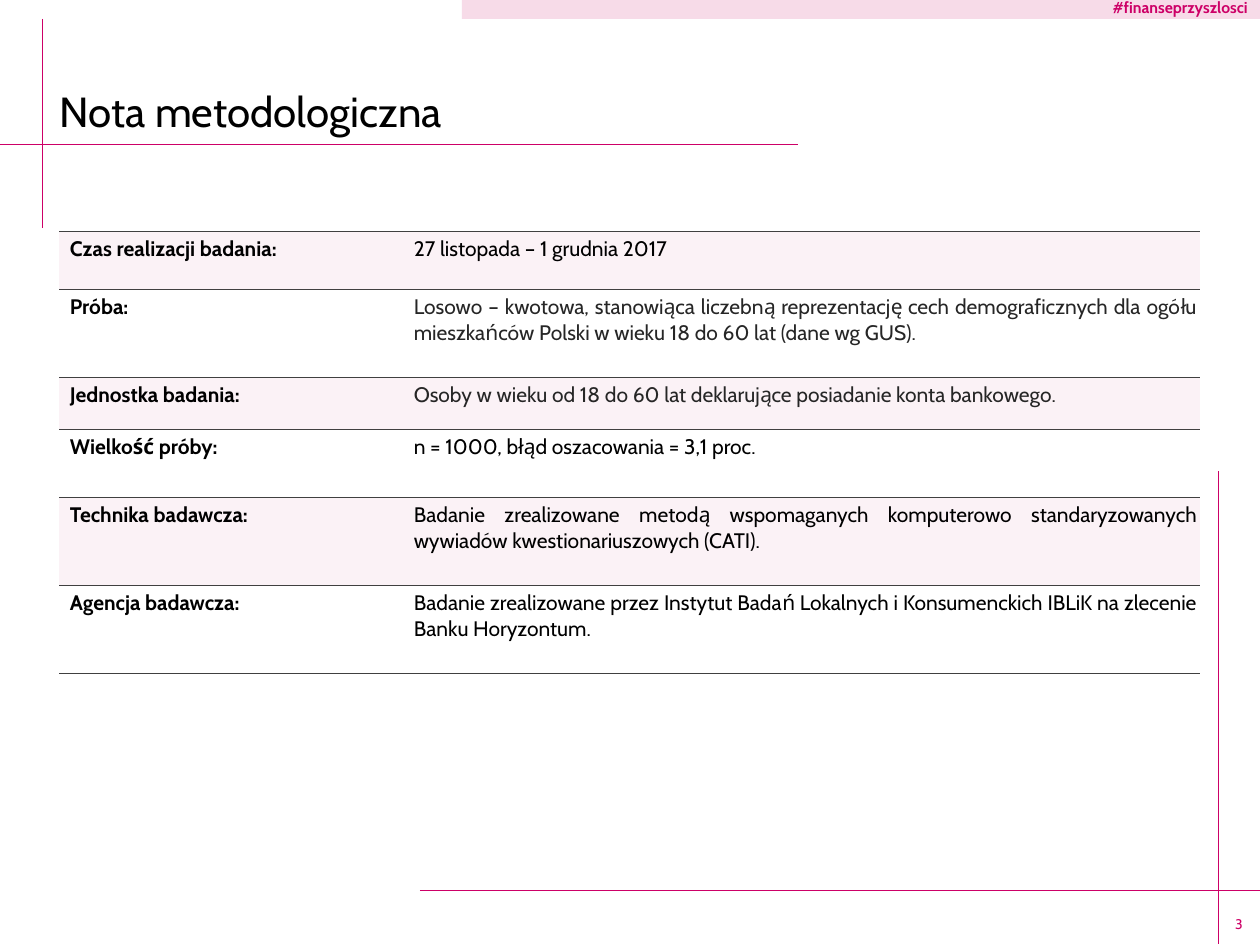
from lxml import etree
from pptx import Presentation
from pptx.dml.color import RGBColor
from pptx.enum.shapes import MSO_CONNECTOR, MSO_SHAPE
from pptx.enum.text import MSO_ANCHOR, PP_ALIGN
from pptx.oxml.ns import qn
from pptx.util import Pt

RECT, LINE = MSO_SHAPE.RECTANGLE, MSO_CONNECTOR.STRAIGHT
MIDDLE, BOTTOM, TOP = MSO_ANCHOR.MIDDLE, MSO_ANCHOR.BOTTOM, MSO_ANCHOR.TOP
LEFT, RIGHT = PP_ALIGN.LEFT, PP_ALIGN.RIGHT
CENTER, JUSTIFY = PP_ALIGN.CENTER, PP_ALIGN.JUSTIFY

COLORS = {"pink": "CD0067", "pale": "F7DBE8", "band": "FBF2F6",
          "black": "000000", "gray": "262626", "rule": "404040"}
SIDES = ("left", "top", "right", "bottom")

ROWS = [
    (33.2, "Czas realizacji badania:", "27 listopada – 1 grudnia 2017", "black"),
    (50.3, "Próba:",
     "Losowo – kwotowa, stanowiąca liczebną reprezentację cech demograficznych "
     "dla ogółu mieszkańców Polski w wieku 18 do 60 lat (dane wg GUS).", "gray"),
    (29.6, "Jednostka badania:",
     "Osoby w wieku od 18 do 60 lat deklarujące posiadanie konta bankowego.", "gray"),
    (38.9, "Wielkość próby:", "n = 1000, błąd oszacowania = 3,1 proc.", "black"),
    (50.3, "Technika badawcza:",
     "Badanie zrealizowane metodą wspomaganych komputerowo standaryzowanych "
     "wywiadów kwestionariuszowych (CATI).", "black"),
    (50.3, "Agencja badawcza:",
     "Badanie zrealizowane przez Instytut Badań Lokalnych i Konsumenckich IBLiK "
     "na zlecenie Banku Horyzontum.", "black"),
]


class Deck:
    """Style and current slide, with a method for each kind of element."""

    def __init__(self, slide, face="Cabin"):
        self.slide, self.face = slide, face

    def color(self, name):
        return RGBColor.from_string(COLORS[name])

    def text(self, frame, words, size, color, align=LEFT, bold=False):
        para = frame.paragraphs[0]
        para.alignment = align
        run = para.add_run()
        run.text = words
        form = {"name": self.face, "size": Pt(size), "bold": bold}
        for key, value in form.items():
            setattr(run.font, key, value)
        run.font.color.rgb = self.color(color)

    def inset(self, item, margins, anchor):
        for side, gap in zip(SIDES, margins):
            setattr(item, f"margin_{side}", Pt(gap))
        item.vertical_anchor = anchor

    def bar(self, box, fill, margins, *text):
        shape = self.slide.shapes.add_shape(RECT, *map(Pt, box))
        shape.shadow.inherit = False
        shape.fill.solid()
        shape.fill.fore_color.rgb = self.color(fill)
        shape.line.fill.background()
        self.inset(shape.text_frame, margins, MIDDLE)
        self.text(shape.text_frame, *text)

    def label(self, box, margins, anchor, *text):
        frame = self.slide.shapes.add_textbox(*map(Pt, box)).text_frame
        frame.word_wrap = True
        self.inset(frame, margins, anchor)
        self.text(frame, *text)

    def line(self, ends, width):
        line = self.slide.shapes.add_connector(LINE, *map(Pt, ends))
        line.line.color.rgb = self.color("pink")
        line.line.width = Pt(width)
        etree.SubElement(line._element.spPr, qn("a:effectLst"))

    def border(self, cell, color, width):
        props = cell._tc.get_or_add_tcPr()
        for side in "LRTB":
            edge = etree.SubElement(props, qn(f"a:ln{side}"), w=str(Pt(width)))
            if side in "LR":
                etree.SubElement(edge, qn("a:noFill"))
            else:
                fill = etree.SubElement(edge, qn("a:solidFill"))
                etree.SubElement(fill, qn("a:srgbClr"), val=COLORS[color])

    def table(self, left, top, widths, rows):
        height = sum(row[0] for row in rows)
        box = map(Pt, (left, top, sum(widths), height))
        table = self.slide.shapes.add_table(len(rows), len(widths), *box).table
        table.first_row = table.horz_banding = False
        for column, width in zip(table.columns, widths):
            column.width = Pt(width)
        for index, (tall, head, body, color) in enumerate(rows):
            table.rows[index].height = Pt(tall)
            texts = ((head, 12, "black", LEFT, True), (body, 12, color, JUSTIFY))
            for cell, text in zip(table.rows[index].cells, texts):
                self.border(cell, "rule", 0.25)
                if index % 2:
                    cell.fill.background()
                else:
                    cell.fill.solid()
                    cell.fill.fore_color.rgb = self.color("band")
                self.inset(cell, (6, 3, 1.6, 3), TOP)
                self.text(cell.text_frame, *text)


def main():
    show = Presentation()
    show.slide_width, show.slide_height = Pt(720), Pt(540)
    deck = Deck(show.slides.add_slide(show.slide_layouts[6]))
    deck.bar((264, 0, 456, 10.8), "pale", (7.2, 3.6, 7.2, 6.5),
             "#finanseprzyszlosci", 9, "pink", RIGHT, True)
    for ends, width in (((24, 10.8, 24, 130.5), 0.5),
                        ((0, 82.8, 456, 82.8), 0.5),
                        ((240, 508.8, 720, 508.8), 0.5),
                        ((696.2, 269.3, 696.2, 539.5), 0.75)):
        deck.line(ends, width)
    deck.label((696, 515.5, 24, 24.5), (1.4, 0.7, 1.4, 0.7), MIDDLE,
               "3", 8, "pink", CENTER)
    deck.label((34, 19.4, 652, 58.3), (0, 0, 0, 0), BOTTOM,
               "Nota metodologiczna", 24, "black")
    deck.table(34, 132, (196.5, 455.5), ROWS)
    show.save("out.pptx")


if __name__ == "__main__":
    main()
